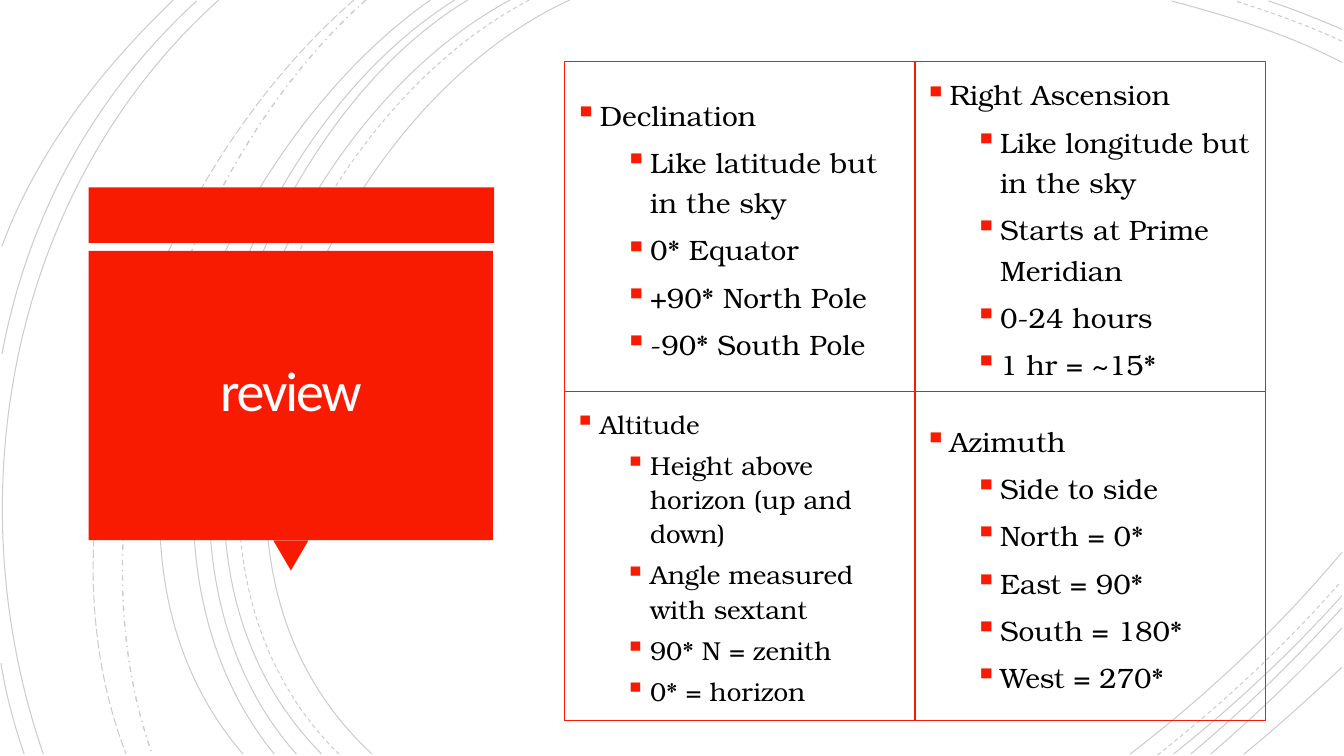
from dataclasses import dataclass
from typing import Any

from lxml import etree
from pptx import Presentation
from pptx.dml.color import RGBColor
from pptx.enum.dml import MSO_LINE
from pptx.enum.shapes import MSO_SHAPE
from pptx.enum.text import MSO_ANCHOR, PP_ALIGN
from pptx.oxml.ns import qn
from pptx.slide import Slide
from pptx.util import Emu, Pt

EMU_PER_PX = 9144
BLACK = RGBColor(0x00, 0x00, 0x00)
RED = RGBColor(0xF8, 0x1B, 0x02)
TITLE_WHITE = RGBColor(0xFF, 0xFE, 0xFF)
WHITE = RGBColor(0xFF, 0xFF, 0xFF)
SOLID = MSO_LINE.SOLID
DASH = MSO_LINE.DASH
DASH_DOT = MSO_LINE.DASH_DOT
LONG_DASH = MSO_LINE.LONG_DASH
RECTANGLE = MSO_SHAPE.RECTANGLE
TRIANGLE = MSO_SHAPE.ISOSCELES_TRIANGLE
MIDDLE = MSO_ANCHOR.MIDDLE
LEFT = PP_ALIGN.LEFT
CENTER = PP_ALIGN.CENTER

PANEL_LEFT, PANEL_TOP = 560, 61
PANEL_PITCH_X, PANEL_PITCH_Y = 347, 327
PANEL_WIDTH, PANEL_HEIGHT = 348, 327
BULLET_INDENT = 25


@dataclass(frozen=True)
class Arc:
    start: tuple[int, int]
    bend_one: tuple[int, int]
    bend_two: tuple[int, int]
    end: tuple[int, int]
    dash: MSO_LINE = SOLID
    weight: float = 0.75


@dataclass(frozen=True)
class Block:
    kind: MSO_SHAPE
    left: int
    top: int
    width: int
    height: int
    rotation: int = 0


@dataclass(frozen=True)
class Panel:
    column: int
    row: int
    heading: str
    points: tuple[str, ...]
    size: float = 20
    line_spacing: float = 1.2


ARCS = (
    Arc((565, 0), (315, 115), (143, 540), (369, 748)),
    Arc((1331, 62), (1278, 34), (1218, 16), (1162, 1)),
    Arc((1121, 748), (1197, 690), (1269, 622), (1331, 548)),
    Arc((525, 0), (285, 125), (123, 537), (336, 748), DASH),
    Arc((1331, 41), (1297, 25), (1260, 12), (1225, 1), DASH),
    Arc((1148, 749), (1213, 698), (1275, 640), (1330, 577), DASH),
    Arc((506, 0), (270, 127), (110, 537), (319, 748)),
    Arc((1331, 29), (1307, 19), (1283, 9), (1258, 1)),
    Arc((1164, 748), (1223, 701), (1280, 648), (1331, 591)),
    Arc((464, 0), (244, 133), (110, 541), (294, 748)),
    Arc((1181, 748), (1234, 704), (1284, 655), (1331, 603)),
    Arc((451, 0), (231, 138), (97, 533), (272, 748)),
    Arc((1201, 748), (1246, 709), (1290, 667), (1331, 623)),
    Arc((427, 0), (217, 147), (53, 529), (241, 748)),
    Arc((1234, 748), (1267, 721), (1299, 692), (1331, 662)),
    Arc((363, 0), (176, 166), (65, 509), (151, 748), DASH_DOT, 1),
    Arc((351, 0), (157, 169), (29, 499), (125, 748), LONG_DASH),
    Arc((217, 0), (11, 185), (-46, 490), (43, 748)),
    Arc((195, 1), (92, 96), (28, 214), (2, 351)),
    Arc((1, 658), (6, 689), (14, 719), (24, 748)),
    Arc((172, 0), (100, 69), (37, 150), (2, 244)),
)

BLOCKS = (
    Block(RECTANGLE, 88, 186, 402, 55),
    Block(TRIANGLE, 271, 536, 35, 30, 180),
    Block(RECTANGLE, 88, 249, 401, 287),
)

PANELS = (
    Panel(0, 0, "Declination", (
        "Like latitude but in the sky", "0* Equator",
        "+90* North Pole", "-90* South Pole")),
    Panel(1, 1, "Azimuth", (
        "Side to side", "North = 0*", "East = 90*", "South = 180*", "West = 270*")),
    Panel(0, 1, "Altitude", (
        "Height above horizon (up and down)", "Angle measured with sextant",
        "90* N = zenith", "0* = horizon"), 18.5, 1.1),
    Panel(1, 0, "Right Ascension", (
        "Like longitude but in the sky", "Starts at Prime Meridian",
        "0-24 hours", "1 hr = ~15*")),
)


def px(length: int) -> Emu:
    return Emu(length * EMU_PER_PX)


def apply_format(target: Any, values: dict[str, Any]) -> None:
    for name, value in values.items():
        setattr(target, name, value)


def add_text(paragraph: Any, text: str, color: RGBColor, values: dict[str, Any]) -> Any:
    run = paragraph.add_run()
    run.text = text
    apply_format(run.font, values)
    run.font.color.rgb = color
    return run


def draw_arc(slide: Slide, arc: Arc) -> None:
    builder = slide.shapes.build_freeform(*arc.start, scale=EMU_PER_PX)
    builder.add_line_segments((arc.bend_one, arc.bend_two, arc.end), close=False)
    shape = builder.convert_to_shape()
    shape.shadow.inherit = False
    shape.fill.background()
    shape.line.color.rgb = BLACK
    apply_format(shape.line, {"width": Pt(arc.weight), "dash_style": arc.dash})
    outline = next(shape.element.iter(qn("a:path")))
    curve = etree.SubElement(outline, qn("a:cubicBezTo"))
    for segment in outline.findall(qn("a:lnTo")):
        curve.append(segment[0])
        outline.remove(segment)
    line_color = next(shape.element.iter(qn("a:ln"))).find(".//" + qn("a:srgbClr"))
    etree.SubElement(line_color, qn("a:alpha"), val="20000")


def draw_block(slide: Slide, block: Block) -> None:
    shape = slide.shapes.add_shape(
        block.kind, px(block.left), px(block.top), px(block.width), px(block.height))
    shape.shadow.inherit = False
    shape.rotation = block.rotation
    shape.fill.solid()
    shape.fill.fore_color.rgb = RED
    shape.line.fill.background()


def draw_title(slide: Slide) -> None:
    frame = slide.shapes.add_textbox(px(97), px(257), px(383), px(269)).text_frame
    inset = px(25)
    apply_format(frame, {
        "word_wrap": True, "vertical_anchor": MIDDLE, "margin_left": inset,
        "margin_right": inset, "margin_top": inset, "margin_bottom": inset})
    paragraph = frame.paragraphs[0]
    apply_format(paragraph, {"alignment": CENTER, "line_spacing": 0.85})
    run = add_text(paragraph, "review", TITLE_WHITE, {"name": "Calibri", "size": Pt(40)})
    run.font._element.set("spc", "-150")


def add_bullet(paragraph: Any, indent: int) -> None:
    properties = paragraph._p.get_or_add_pPr()
    properties.set("marL", str(px(indent)))
    properties.set("indent", str(px(-BULLET_INDENT)))
    color = etree.SubElement(properties, qn("a:buClr"))
    etree.SubElement(color, qn("a:srgbClr"), val=str(RED))
    etree.SubElement(properties, qn("a:buSzPct"), val="110000")
    etree.SubElement(properties, qn("a:buChar"), char="▪")


def draw_panel(slide: Slide, panel: Panel) -> None:
    shape = slide.shapes.add_shape(
        RECTANGLE,
        px(PANEL_LEFT + panel.column * PANEL_PITCH_X),
        px(PANEL_TOP + panel.row * PANEL_PITCH_Y),
        px(PANEL_WIDTH), px(PANEL_HEIGHT))
    shape.shadow.inherit = False
    shape.fill.background()
    shape.line.color.rgb = RED
    shape.line.width = Pt(0.75)
    frame = shape.text_frame
    apply_format(frame, {"word_wrap": True, "vertical_anchor": MIDDLE})
    for index, text in enumerate((panel.heading, *panel.points)):
        paragraph = frame.add_paragraph() if index else frame.paragraphs[0]
        apply_format(paragraph, {
            "alignment": LEFT, "level": 1 if index else 0,
            "line_spacing": panel.line_spacing, "space_before": Pt(5 if index else 10)})
        add_bullet(paragraph, 75 if index else BULLET_INDENT)
        add_text(paragraph, text, BLACK, {"name": "TeX Gyre Bonum", "size": Pt(panel.size)})


def main() -> None:
    presentation = Presentation()
    apply_format(presentation, {"slide_width": px(1333), "slide_height": px(750)})
    slide = presentation.slides.add_slide(presentation.slide_layouts[6])
    slide.background.fill.solid()
    slide.background.fill.fore_color.rgb = WHITE
    for arc in ARCS:
        draw_arc(slide, arc)
    for block in BLOCKS:
        draw_block(slide, block)
    draw_title(slide)
    for panel in PANELS:
        draw_panel(slide, panel)
    presentation.save("out.pptx")


if __name__ == "__main__":
    main()
